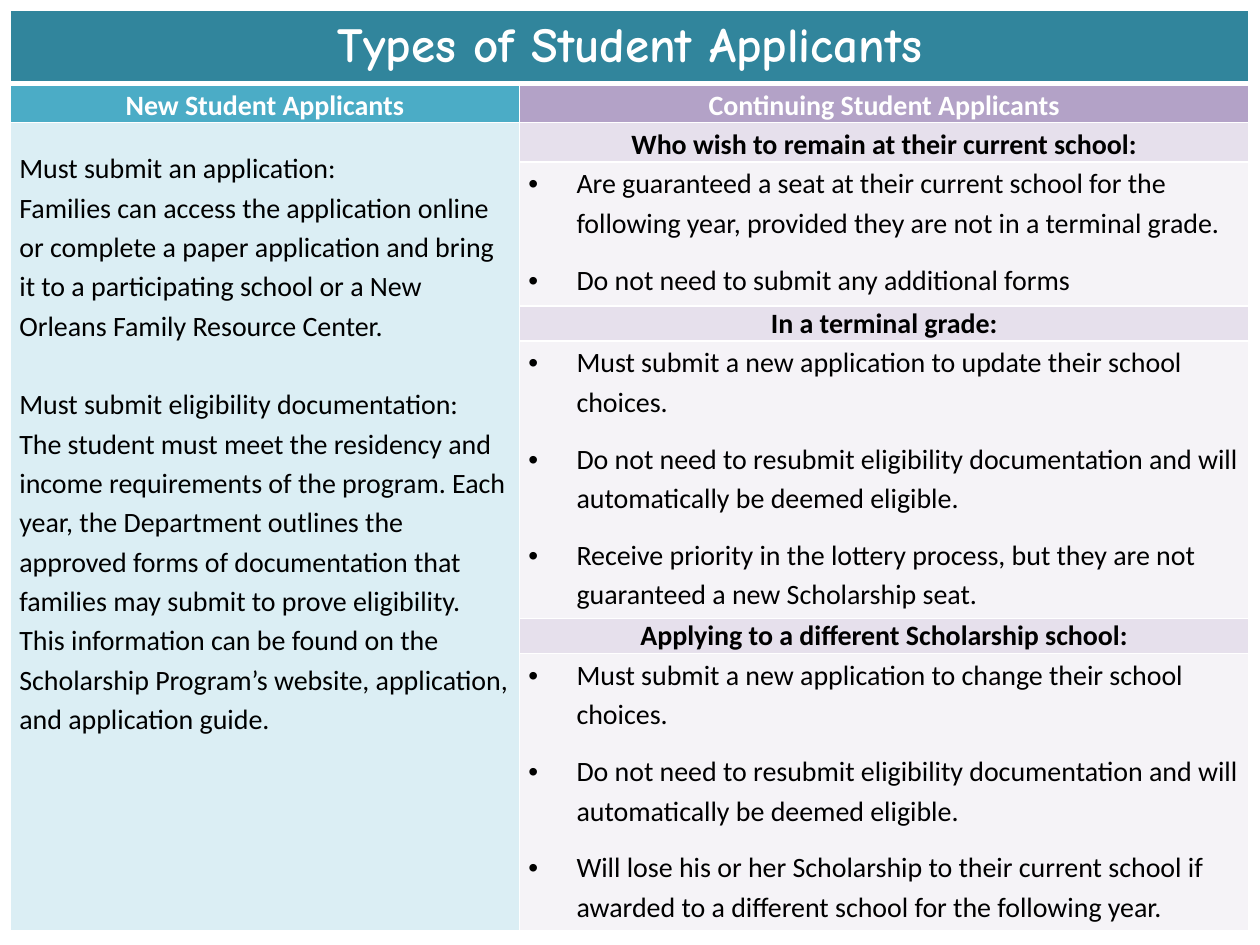
from lxml.etree import SubElement
from pptx import Presentation
from pptx.dml.color import RGBColor
from pptx.enum.text import MSO_ANCHOR, PP_ALIGN
from pptx.oxml.ns import qn
from pptx.util import Cm, Pt

WHITE = RGBColor(0xFF, 0xFF, 0xFF)
BLACK = RGBColor(0, 0, 0)
TEAL = RGBColor(0x31, 0x85, 0x9C)
AQUA = RGBColor(0x4B, 0xAC, 0xC6)
PALE_AQUA = RGBColor(0xDB, 0xEE, 0xF4)
PURPLE = RGBColor(0xB3, 0xA2, 0xC7)
LILAC = RGBColor(0xE6, 0xE0, 0xEC)
PALE_LILAC = RGBColor(0xF5, 0xF3, 0xF7)

LEFT_SHARE = 0.411
ROW_HEIGHTS = [1.47, 0.79, 0.79, 2.9, 0.71, 5.59, 0.71, 5.59]

NEW_STUDENTS = [
    ("Must submit an application:", 0),
    ("Families can access the application online or complete a paper application "
     "and bring it to a participating school or a New Orleans Family Resource Center.", 0),
    ("Must submit eligibility documentation:", 22.4),
    ("The student must meet the residency and income requirements of the program. "
     "Each year, the Department outlines the approved forms of documentation that "
     "families may submit to prove eligibility. This information can be found on the "
     "Scholarship Program’s website, application, and application guide.", 0),
]
NO_RESUBMISSION = ("Do not need to resubmit eligibility documentation and will "
                   "automatically be deemed eligible.")
CONTINUING_STUDENTS = [
    ("Who wish to remain at their current school:", 1.15, [
        "Are guaranteed a seat at their current school for the following year, "
        "provided they are not in a terminal grade.",
        "Do not need to submit any additional forms",
    ]),
    ("In a terminal grade:", 1, [
        "Must submit a new application to update their school choices.",
        NO_RESUBMISSION,
        "Receive priority in the lottery process, but they are not guaranteed "
        "a new Scholarship seat.",
    ]),
    ("Applying to a different Scholarship school:", 1, [
        "Must submit a new application to change their school choices.",
        NO_RESUBMISSION,
        "Will lose his or her Scholarship to their current school if awarded "
        "to a different school for the following year.",
    ]),
]


def set_bullet(para):
    properties = para._p.get_or_add_pPr()
    properties.set("marL", str(Cm(0.97)))
    properties.set("indent", str(-Cm(0.97)))
    SubElement(properties, qn("a:buFont"), typeface="Arial")
    SubElement(properties, qn("a:buChar"), char="•")
    tabs = SubElement(properties, qn("a:tabLst"))
    SubElement(tabs, qn("a:tab"), pos=str(Cm(1.27)), algn="l")


def add_text(cell, text, *, size=16, font="Calibri", color=BLACK, bold=False,
             align=PP_ALIGN.LEFT, spacing=1.15, before=0, after=0, bullet=False):
    frame = cell.text_frame
    para = frame.add_paragraph() if frame.text else frame.paragraphs[0]
    if bullet:
        set_bullet(para)
    para.alignment = align
    para.line_spacing = spacing
    para.space_before = Pt(before)
    para.space_after = Pt(after)
    span = para.add_run()
    span.text = text
    span.font.size = Pt(size)
    span.font.name = font
    span.font.bold = bold
    span.font.color.rgb = color


def set_borders(cell, **widths):
    properties = cell._tc.get_or_add_tcPr()
    for side in "LRTB":
        line = SubElement(properties, qn(f"a:ln{side}"), w=str(Pt(widths.get(side, 1))))
        fill = SubElement(line, qn("a:solidFill"))
        SubElement(fill, qn("a:srgbClr"), val=str(WHITE))


def fill_cell(cell, color, anchor=MSO_ANCHOR.TOP):
    cell.fill.solid()
    cell.fill.fore_color.rgb = color
    cell.vertical_anchor = anchor


def add_grid(page, left, top, width, height):
    frame = page.shapes.add_table(len(ROW_HEIGHTS), 2, left, top, width, height)
    table = frame.table
    table.first_row = table.horz_banding = False
    table.columns[0].width = int(width * LEFT_SHARE)
    table.columns[1].width = width - table.columns[0].width
    for row, share in zip(table.rows, ROW_HEIGHTS):
        row.height = int(height * share / sum(ROW_HEIGHTS))
    for index, row in enumerate(table.rows):
        for cell in row.cells:
            set_borders(cell, T=3 if index == 1 else 1, B=3 if index == 0 else 1)
            cell.margin_left = cell.margin_right = Cm(0.18)
            cell.margin_top = cell.margin_bottom = 0
    return table


def add_headings(table):
    title = table.cell(0, 0)
    title.merge(table.cell(0, 1))
    headings = [
        (title, "Types of Student Applicants", TEAL, 28, "Comic Neue"),
        (table.cell(1, 0), "New Student Applicants", AQUA, 16, "Calibri"),
        (table.cell(1, 1), "Continuing Student Applicants", PURPLE, 16, "Calibri"),
    ]
    for cell, text, color, size, font in headings:
        fill_cell(cell, color)
        add_text(cell, text, size=size, font=font, color=WHITE, bold=True,
                 align=PP_ALIGN.CENTER)


def add_new_students(table):
    cell = table.cell(2, 0)
    cell.merge(table.cell(len(ROW_HEIGHTS) - 1, 0))
    fill_cell(cell, PALE_AQUA)
    cell.margin_top = Cm(0.49)
    for text, before in NEW_STUDENTS:
        add_text(cell, text, before=before)


def add_continuing_students(table):
    for index, (heading, spacing, points) in enumerate(CONTINUING_STUDENTS):
        head = table.cell(2 + 2 * index, 1)
        body = table.cell(3 + 2 * index, 1)
        fill_cell(head, LILAC, MSO_ANCHOR.MIDDLE)
        add_text(head, heading, bold=True, align=PP_ALIGN.CENTER, spacing=spacing)
        fill_cell(body, PALE_LILAC)
        for point in points:
            add_text(body, point, after=10, bullet=True)


def add_applicant_table(page, left, top, width, height):
    table = add_grid(page, left, top, width, height)
    add_headings(table)
    add_new_students(table)
    add_continuing_students(table)


def main():
    deck = Presentation()
    deck.slide_width = Cm(25.4)
    deck.slide_height = Cm(19.05)
    page = deck.slides.add_slide(deck.slide_layouts[6])
    add_applicant_table(page, Cm(0.21), Cm(0.21), Cm(24.97), Cm(sum(ROW_HEIGHTS)))
    deck.save("out.pptx")


if __name__ == "__main__":
    main()
